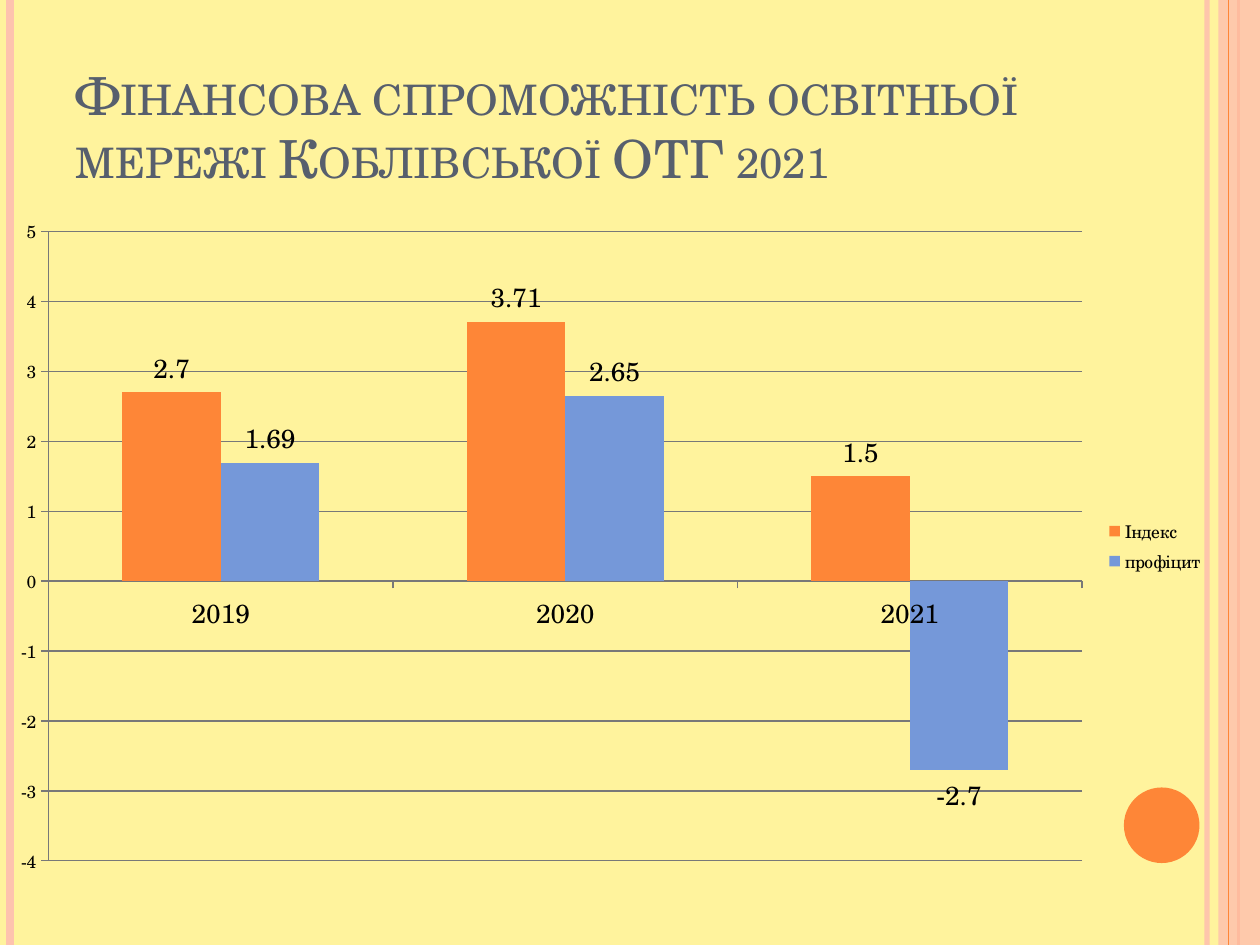
import lxml.etree
import pptx
import pptx.chart.data
import pptx.dml.color
import pptx.enum.chart
import pptx.enum.shapes
import pptx.enum.text
import pptx.oxml
import pptx.oxml.ns
import pptx.util

COLORS = {"page": "FFF39D", "peach": "FEC3AE", "orange": "FE8637",
          "blue": "7598D9", "title": "575F6D", "text": "000000", "grid": "787878"}
FONT = "TeX Gyre Schola"
W, H = 10, 7.5
qn = pptx.oxml.ns.qn
Inches, Pt = pptx.util.Inches, pptx.util.Pt


def paint(fmt, name, alpha=100):
    """Give a fill a solid colour with an opacity in percent."""
    fmt.solid()
    fmt.fore_color.rgb = pptx.dml.color.RGBColor.from_string(COLORS[name])
    if alpha < 100:
        clr = fmt._xPr.find(qn("a:solidFill"))[0]
        lxml.etree.SubElement(clr, qn("a:alpha")).set("val", str(alpha * 1000))


def vertical_line(x, name, width, alpha=100):
    c = s.shapes.add_connector(pptx.enum.shapes.MSO_CONNECTOR.STRAIGHT,
                               Inches(x), 0, Inches(x), Inches(H))
    paint(c.line.fill, name, alpha)
    c.line.width = Pt(width)
    lxml.etree.SubElement(c._element.spPr, qn("a:effectLst"))


prs = pptx.Presentation()
prs.slide_width, prs.slide_height = Inches(W), Inches(H)
s = prs.slides.add_slide(prs.slide_layouts[6])
paint(s.background.fill, "page")

# Side stripes, band and disc
for stripe in [(9.58, "peach", 3, 93), (0.08, "peach", 4.5), (9.83, "orange", 1.5)]:
    vertical_line(*stripe)
SHAPES = pptx.enum.shapes.MSO_SHAPE
for kind, box, name, alpha in [
    (SHAPES.RECTANGLE, (9.67, 0, 0.33, H), "peach", 87),
    (SHAPES.OVAL, (8.92, 6.25, 0.6, 0.6), "orange", 100),
]:
    sp = s.shapes.add_shape(kind, *map(Inches, box))
    sp.shadow.inherit = False
    paint(sp.fill, name, alpha)
    sp.line.fill.background()
vertical_line(9.75, "orange", 0.75)

# Title
tf = s.shapes.add_textbox(*map(Inches, (0.5, 0.3, 8.17, 1.25))).text_frame
tf.word_wrap = True
tf.vertical_anchor = pptx.enum.text.MSO_ANCHOR.BOTTOM
r = tf.paragraphs[0].add_run()
r.text = "Фінансова спроможність освітньої мережі Коблівської ОТГ 2021"
r.font.name, r.font.size = FONT, Pt(30)
paint(r.font.fill, "title")
r.font._element.set("cap", "small")

# Chart
data = pptx.chart.data.CategoryChartData()
data.categories = ["2019", "2020", "2021"]
data.add_series("Індекс", [2.7, 3.71, 1.5])
data.add_series("профіцит", [1.69, 2.65, -2.7])
chart = s.shapes.add_chart(pptx.enum.chart.XL_CHART_TYPE.COLUMN_CLUSTERED,
                           *map(Inches, (0, 1.62, 9.65, 5.43)), data).chart
chart.has_title = False
chart.font.name, chart.font.size = FONT, Pt(10)
paint(chart.font.fill, "text")
chart.has_legend = True
chart.legend.position = pptx.enum.chart.XL_LEGEND_POSITION.RIGHT
chart.legend.include_in_layout = False

plot = chart.plots[0]
plot.gap_width, plot.overlap, plot.vary_by_categories = 150, 0, False
for series, name in zip(plot.series, ["orange", "blue"]):
    paint(series.format.fill, name)
    series.invert_if_negative = False
    labels = series.data_labels
    labels.show_value = True
    labels.position = pptx.enum.chart.XL_LABEL_POSITION.OUTSIDE_END
    labels.font.name, labels.font.size = FONT, Pt(15)
    paint(labels.font.fill, "text")

cat, val = chart.category_axis, chart.value_axis
cat.tick_labels.font.size = Pt(15)
val.minimum_scale, val.maximum_scale, val.major_unit = -4, 5, 1
val.has_major_gridlines = True
for axis in (cat, val):
    axis.major_tick_mark = pptx.enum.chart.XL_TICK_MARK.OUTSIDE
for part in (cat, val, val.major_gridlines):
    paint(part.format.line.fill, "grid")
    part.format.line.width = Pt(0.75)

# Plot area as shares of the chart
area = plot._element.getparent()
for old in area.findall(qn("c:layout")):
    area.remove(old)
layout = lxml.etree.Element(qn("c:layout"))
manual = lxml.etree.SubElement(layout, qn("c:manualLayout"))
for tag, value in [("layoutTarget", "inner"), ("xMode", "edge"), ("yMode", "edge"),
                   ("x", 0.04), ("y", 0.04), ("w", 0.85), ("h", 0.92)]:
    lxml.etree.SubElement(manual, qn("c:" + tag)).set("val", str(value))
area.insert(0, layout)

prs.save("out.pptx")
